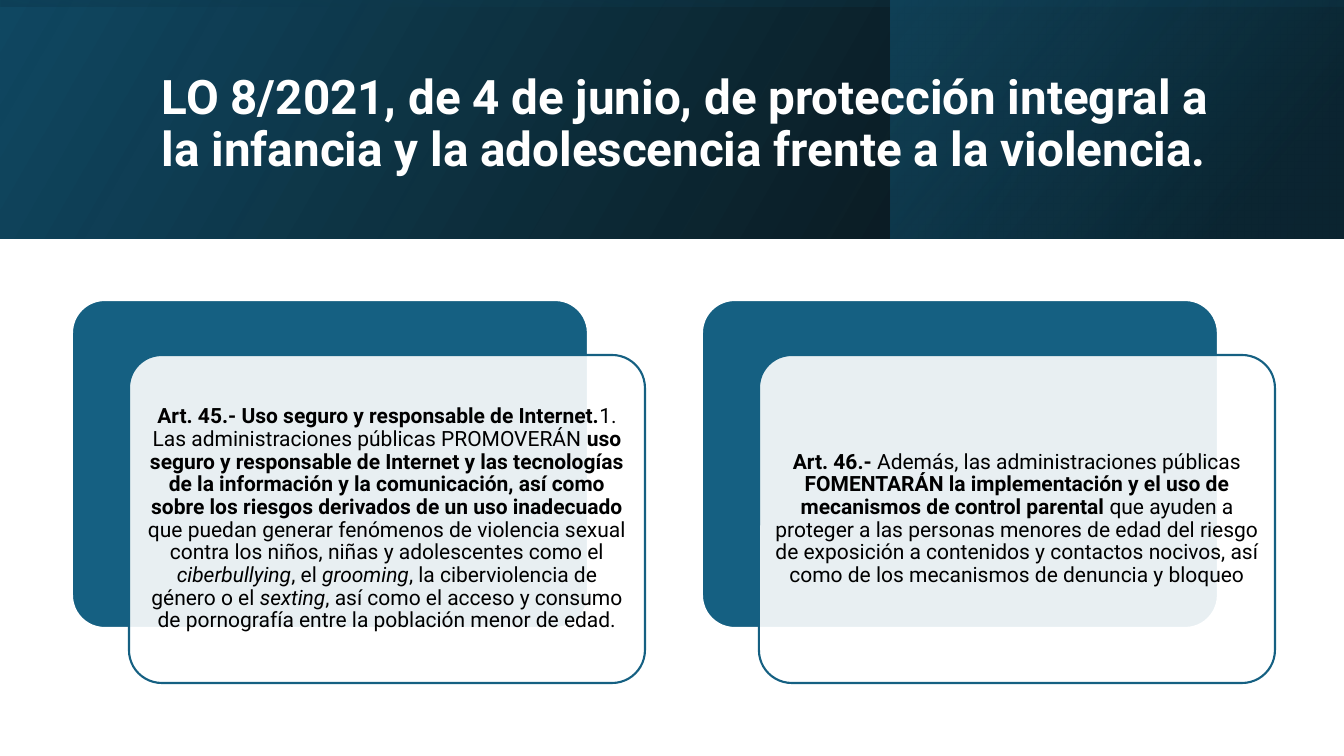
from lxml.etree import SubElement
from pptx import Presentation
from pptx.dml.color import RGBColor
from pptx.enum.shapes import MSO_SHAPE
from pptx.enum.text import MSO_ANCHOR, PP_ALIGN
from pptx.oxml.ns import qn
from pptx.util import Emu, Pt

PX = 914400 / 100.8
SLIDE_W, SLIDE_H, BAND_H = 1344, 756, 239
BLUE, DEEP, WHITE, BLACK = "156082", "104862", "FFFFFF", "000000"

TITLE = "LO 8/2021, de 4 de junio, de protección integral a la infancia y la adolescencia frente a la violencia."
TITLE_BOX = (152, 38, 1072, 174)

BANDS = [
    ((0, 0, SLIDE_W, BAND_H), 0, 330, [(0, BLACK, 96), (100, DEEP, 100)]),
    ((891, 0, 452, BAND_H), 0, 320, [(19, "0B3041", 68), (100, BLUE, 48)]),
    (((SLIDE_W - BAND_H) / 2, (BAND_H - SLIDE_W) / 2, BAND_H, SLIDE_W), 270, 350,
     [(23, DEEP, 16), (99, BLACK, 45)]),
]

ARTICLES = [
    [
        ("Art. 45.- Uso seguro y responsable de Internet.", "b"),
        ("1. Las administraciones públicas PROMOVERÁN ", ""),
        ("uso seguro y responsable de Internet y las tecnologías de la información y la comunicación, "
         "así como sobre los riesgos derivados de un uso inadecuado ", "b"),
        ("que puedan generar fenómenos de violencia sexual contra los niños, niñas y adolescentes como el ", ""),
        ("ciberbullying", "i"),
        (", el ", ""),
        ("grooming", "i"),
        (", la ciberviolencia de género o el ", ""),
        ("sexting", "i"),
        (", así como el acceso y consumo de pornografía entre la población menor de edad.", ""),
    ],
    [
        ("Art. 46.- ", "b"),
        ("Además, las administraciones públicas ", ""),
        ("FOMENTARÁN la implementación y el uso de mecanismos de control parental", "b"),
        (" que ayuden a proteger a las personas menores de edad del riesgo de exposición a contenidos "
         "y contactos nocivos, así como de los mecanismos de denuncia y bloqueo", ""),
    ],
]

CARD_X, CARD_Y, CARD_W, CARD_H, CARD_STEP = 72, 300, 516, 328, 630
FRONT_DX, FRONT_DY, TEXT_PAD = 57, 55, 10


def rgb(value):
    return RGBColor.from_string(value)


def box(*lengths):
    return [Emu(round(v * PX)) for v in lengths]


def set_alpha(color, percent):
    SubElement(color, qn("a:alpha"), val=str(percent * 1000))


def add_band(slide, place, rotation, angle, stops):
    sp = slide.shapes.add_shape(MSO_SHAPE.RECTANGLE, *box(*place))
    sp.shadow.inherit = False
    sp.line.fill.background()
    sp.rotation = rotation
    sp._element.spPr.find(qn("a:xfrm")).set("flipH", "1")
    sp.fill.gradient()
    grad = sp._element.spPr.find(qn("a:gradFill"))
    for child in list(grad):
        grad.remove(child)
    grad.set("rotWithShape", "1")
    stop_list = SubElement(grad, qn("a:gsLst"))
    for position, color, alpha in stops:
        stop = SubElement(stop_list, qn("a:gs"), pos=str(position * 1000))
        set_alpha(SubElement(stop, qn("a:srgbClr"), val=color), alpha)
    SubElement(grad, qn("a:lin"), ang=str(angle * 60000), scaled="0")


def add_card(slide, x, y, fill, line, alpha=100):
    sp = slide.shapes.add_shape(MSO_SHAPE.ROUNDED_RECTANGLE, *box(x, y, CARD_W, CARD_H))
    sp.shadow.inherit = False
    sp.adjustments[0] = 0.1
    sp.fill.solid()
    sp.fill.fore_color.rgb = rgb(fill)
    if alpha < 100:
        set_alpha(sp._element.spPr.find(qn("a:solidFill"))[0], alpha)
    sp.line.color.rgb = rgb(line)
    sp.line.width = Pt(1.5)


def add_text(slide, place, runs, size, color, frame=None, paragraph=None):
    tf = slide.shapes.add_textbox(*box(*place)).text_frame
    p = tf.paragraphs[0]
    frame_format = {"word_wrap": True, "vertical_anchor": MSO_ANCHOR.MIDDLE, **(frame or {})}
    for target, values in ((tf, frame_format), (p, {"line_spacing": 0.9, **(paragraph or {})})):
        for name, value in values.items():
            setattr(target, name, value)
    for text, style in runs:
        r = p.add_run()
        r.text = text
        font = {"name": "Roboto", "size": Pt(size), "bold": style == "b", "italic": style == "i"}
        for name, value in font.items():
            setattr(r.font, name, value)
        r.font.color.rgb = rgb(color)


def main():
    prs = Presentation()
    prs.slide_width, prs.slide_height = box(SLIDE_W, SLIDE_H)
    slide = prs.slides.add_slide(prs.slide_layouts[6])
    for band in BANDS:
        add_band(slide, *band)
    add_text(slide, TITLE_BOX, [(TITLE, "b")], 34, WHITE)

    insets = {f"margin_{side}": box(6)[0] for side in ("left", "top", "right", "bottom")}
    centred = {"alignment": PP_ALIGN.CENTER, "space_after": Pt(5)}
    for i, runs in enumerate(ARTICLES):
        x = CARD_X + i * CARD_STEP
        front_x, front_y = x + FRONT_DX, CARD_Y + FRONT_DY
        add_card(slide, x, CARD_Y, BLUE, WHITE)
        add_card(slide, front_x, front_y, WHITE, BLUE, 90)
        place = (front_x + TEXT_PAD, front_y + TEXT_PAD, CARD_W - 2 * TEXT_PAD, CARD_H - 2 * TEXT_PAD)
        add_text(slide, place, runs, 15, BLACK, insets, centred)
    prs.save("out.pptx")


if __name__ == "__main__":
    main()
